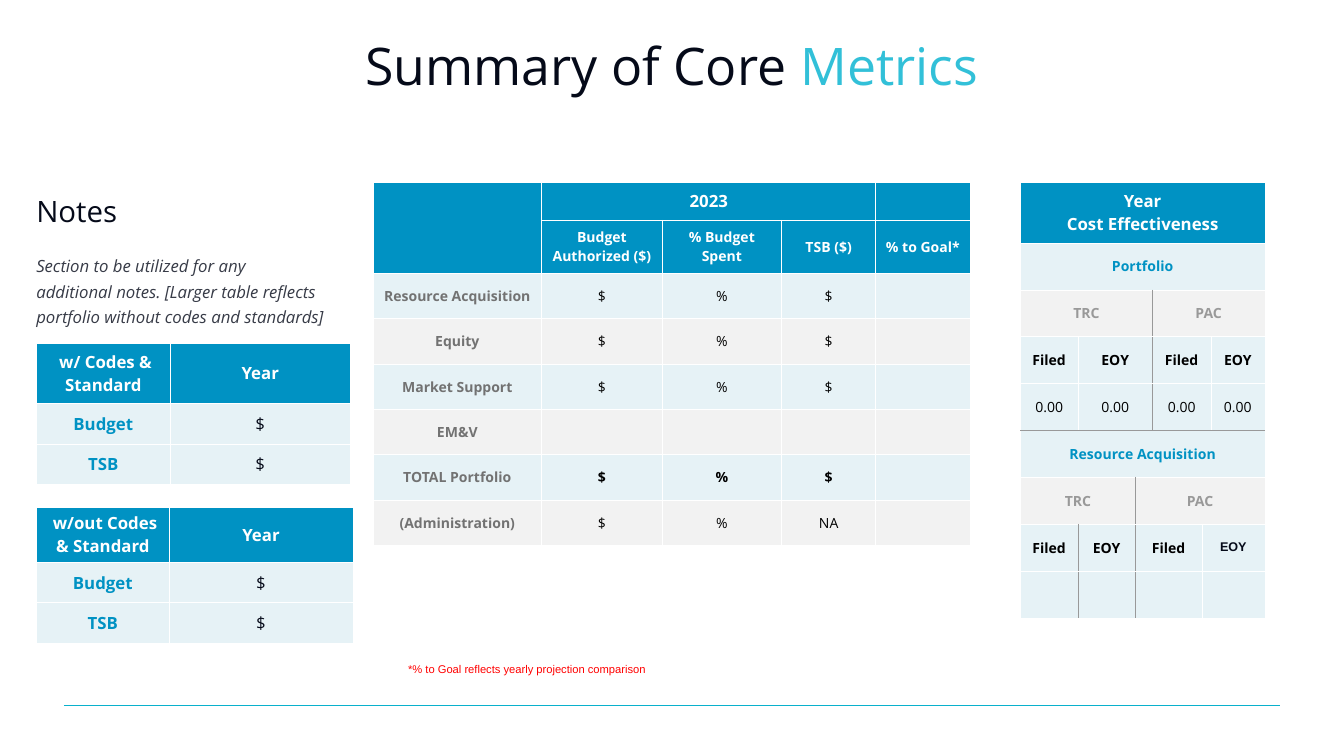
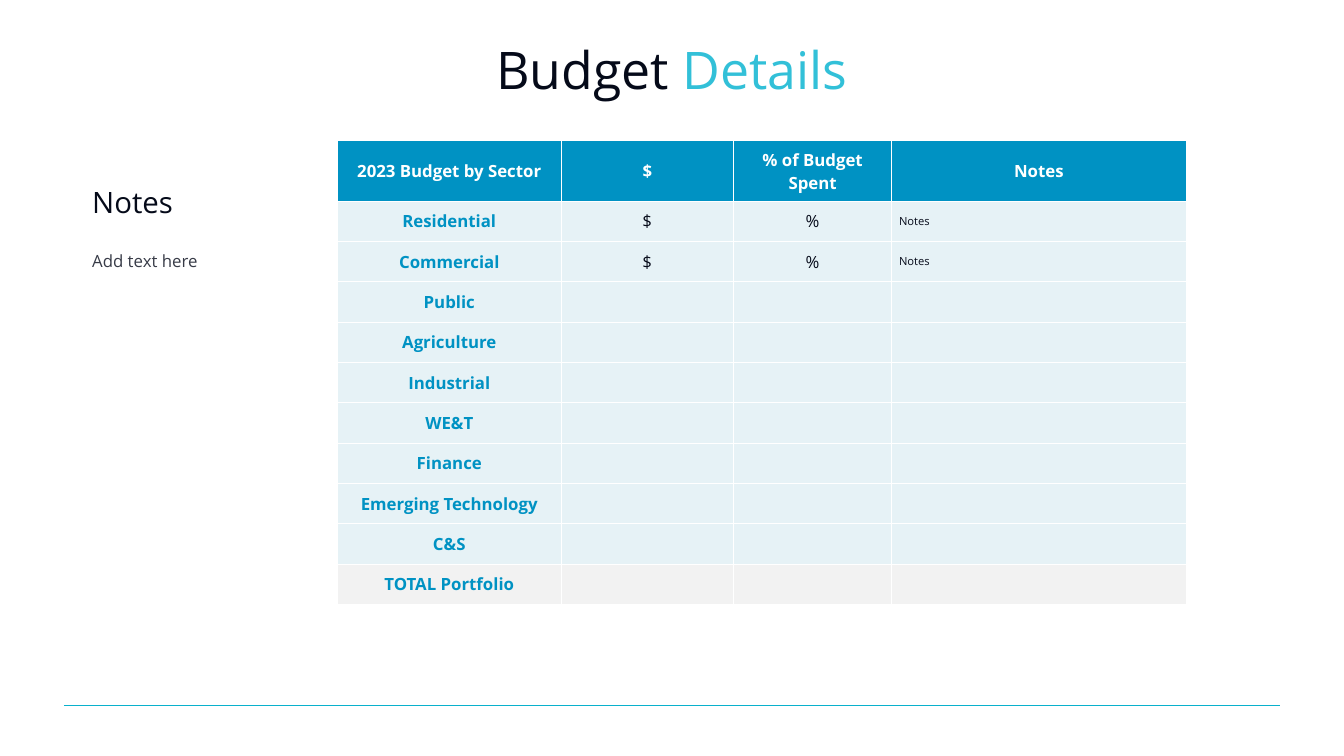
from dataclasses import dataclass

from lxml import etree
from pptx import Presentation
from pptx.dml.color import RGBColor
from pptx.enum.shapes import MSO_CONNECTOR
from pptx.enum.text import MSO_ANCHOR, PP_ALIGN
from pptx.oxml.ns import qn
from pptx.util import Inches, Pt

LEFT, MID = PP_ALIGN.LEFT, PP_ALIGN.CENTER
TOP, CORE = MSO_ANCHOR.TOP, MSO_ANCHOR.MIDDLE
LINE = MSO_CONNECTOR.STRAIGHT

FONT = "Open Sans"
INK, SLATE, BLACK, WHITE = "050A19", "373B47", "000000", "FFFFFF"
BLUE, AQUA, TEAL, RED = "0092C3", "32C0D8", "09B1CC", "FF0000"
PALE, MIST, GREY, DIM = "E6F2F6", "F2F2F2", "999999", "727272"


@dataclass
class Cell:
    """One table cell; edge names the sides (L, R, T, B) drawn in grey."""
    text: str = ""
    fill: str = PALE
    color: str = BLACK
    size: int = 20
    bold: bool = False
    align: object = MID
    font: str = FONT
    wide: int = 1
    tall: int = 1
    edge: str = ""
    pad: float = 0.15


def rgb(code):
    return RGBColor.from_string(code)


def add_run(para, text, size, color, bold=False, italic=False, font=FONT):
    run = para.add_run()
    run.text = text
    run.font.name, run.font.size = font, Pt(size)
    run.font.bold, run.font.italic = bold, italic
    run.font.color.rgb = rgb(color)


def add_text(slide, box, runs, pads=(0, 0.05, 0.1, 0.05), space=1.0,
             align=LEFT, anchor=TOP):
    frame = slide.shapes.add_textbox(*map(Inches, box)).text_frame
    frame.word_wrap = True
    frame.vertical_anchor = anchor
    (frame.margin_left, frame.margin_top,
     frame.margin_right, frame.margin_bottom) = map(Inches, pads)
    para = frame.paragraphs[0]
    para.alignment, para.line_spacing = align, space
    for run in runs:
        add_run(para, *run)


def add_edges(cell, grey):
    props = cell._tc.get_or_add_tcPr()
    for spot, side in enumerate("LRTB"):
        line = etree.Element(qn("a:ln" + side), w=str(Pt(1)))
        fill = etree.SubElement(line, qn("a:solidFill"))
        etree.SubElement(fill, qn("a:srgbClr"),
                         val=GREY if side in grey else WHITE)
        props.insert(spot, line)


def fill_cell(cell, data):
    cell.fill.solid()
    cell.fill.fore_color.rgb = rgb(data.fill)
    add_edges(cell, data.edge)
    if not data.text:
        return
    cell.vertical_anchor = CORE
    cell.margin_left = cell.margin_right = Inches(0.15)
    cell.margin_top = cell.margin_bottom = Inches(data.pad)
    frame = cell.text_frame
    for num, line in enumerate(data.text.split("\n")):
        para = frame.add_paragraph() if num else frame.paragraphs[0]
        para.alignment = data.align
        add_run(para, line, data.size, data.color, data.bold, font=data.font)


def add_grid(slide, left, top, cols, tall, rows):
    """Place a table; None in a row is a place covered by a merged cell."""
    shape = slide.shapes.add_table(
        len(rows), len(cols), Inches(left), Inches(top),
        Inches(sum(cols)), Inches(sum(tall)))
    table = shape.table
    table.first_row = table.horz_banding = False
    for col, size in zip(table.columns, cols):
        col.width = Inches(size)
    for row, size in zip(table.rows, tall):
        row.height = Inches(size)
    for r, row in enumerate(rows):
        for c, data in enumerate(row):
            if data is None:
                continue
            first = table.cell(r, c)
            fill_cell(first, data)
            if data.wide * data.tall == 1:
                continue
            for y in range(r, r + data.tall):
                for x in range(c, c + data.wide):
                    if (y, x) != (r, c):
                        fill_cell(table.cell(y, x),
                                  Cell(fill=data.fill, edge=data.edge))
            first.merge(table.cell(r + data.tall - 1, c + data.wide - 1))


def head(text="", size=24, **more):
    return Cell(text, BLUE, WHITE, size, True, **more)


def key(text, fill=PALE):
    return Cell(text, fill, BLUE, 24, True)


def value(text):
    return Cell(text, color=INK, size=24)


def add_base(slide, start, end, space):
    """Title in two colours and the footer rule."""
    rule = slide.shapes.add_connector(
        LINE, Inches(1.27), Inches(14), Inches(25.4), Inches(14))
    rule.line.color.rgb, rule.line.width = rgb(TEAL), Pt(0.75)
    etree.SubElement(rule._element.spPr, qn("a:effectLst"))
    add_text(slide, (1.83, 0.73, 23, 1.27),
             [(start, 74, INK), (end, 74, AQUA)],
             (0, 0, 0, 0), space, MID, CORE)


def add_notes(slide, box, gap, text, italic=False):
    left, top, width, height = box
    add_text(slide, (left, top, 8.07, 1.04), [("Notes", 42, INK)], space=0.9)
    add_text(slide, (left, top + gap, width, height - gap),
             [(text, 24, SLATE, False, italic)], space=1.28)


def add_codes(slide, top, cols, title, first, pad):
    rows = [[head(title, pad=pad), head("Year")]]
    rows += [[key(name), value("$")] for name in ("Budget", "TSB")]
    add_grid(slide, 0.73, top, cols, [first, 0.8, 0.8], rows)


def add_sectors(slide, left, top):
    """Core metrics by sector."""
    names = ("Budget Authorized ($)", "% Budget Spent", "TSB ($)", "% to Goal*")
    rows = [[head(tall=2), head("2023", wide=3), None, None, head()],
            [None] + [head(name, 20) for name in names]]
    body = [("Resource Acquisition", "$", "%", "$"),
            ("Equity", "$", "%", "$"),
            ("Market Support", "$", "%", "$"),
            ("EM&V", "", "", ""),
            ("TOTAL Portfolio", "$", "%", "$"),
            ("(Administration)", "$", "%", "NA")]
    for num, (name, *vals) in enumerate(body):
        fill = MIST if num % 2 else PALE
        bold = name.startswith("TOTAL")
        rows.append([Cell(name, fill, DIM, bold=True)]
                    + [Cell(val, fill, bold=bold) for val in vals]
                    + [Cell(fill=fill)])
    add_grid(slide, left, top, [3.35, 2.39, 2.37, 1.87, 1.87],
             [0.75, 1.05] + [0.9] * 6, rows)


def add_costs(slide, left, top):
    """Cost effectiveness, filed and at end of year."""
    def band(text, edge=""):
        return [Cell(text, color=BLUE, bold=True, wide=6, edge=edge)] + [None] * 5

    def tests(wide):
        row = [None] * 6
        row[0] = Cell("TRC", MIST, GREY, bold=True, wide=wide, edge="R")
        row[wide] = Cell("PAC", MIST, GREY, bold=True, wide=6 - wide, edge="L")
        return row

    def upper(texts, bold, low=""):
        one, two, three, four = texts
        return [Cell(one, bold=bold, edge=low),
                Cell(two, bold=bold, wide=2, edge="R" + low), None,
                Cell(three, bold=bold, wide=2, edge="L" + low), None,
                Cell(four, bold=bold, edge=low)]

    def lower(texts):
        one, two, three, four = texts
        return [Cell(one, bold=True, edge="R"), Cell(two, bold=True, edge="LR"),
                Cell(three, bold=True, wide=2, edge="L"), None,
                Cell(four, color=INK, size=18, bold=True, font="Arial", wide=2),
                None]

    names = ("Filed", "EOY") * 2
    rows = [[head("Year\nCost Effectiveness", wide=6)] + [None] * 5,
            band("Portfolio"), tests(3), upper(names, True),
            upper(["0.00"] * 4, False, "B"),
            band("Resource Acquisition", "T"), tests(2), lower(names),
            lower([""] * 4)]
    add_grid(slide, left, top, [1.14, 1.14, 0.18, 0.98, 0.18, 1.07],
             [1.2] + [0.93] * 8, rows)


def add_budget(slide, left, top):
    names = ("2023 Budget by Sector", "$", "% of Budget Spent", "Notes")
    rows = [[head(name) for name in names]]
    for name in ("Residential", "Commercial"):
        rows.append([key(name), value("$"), value("%"),
                     Cell("Notes", color=INK, size=16, align=LEFT)])
    for name in ("Public", "Agriculture", "Industrial", "WE&T", "Finance",
                 "Emerging Technology", "C&S", "TOTAL Portfolio"):
        fill = MIST if name.startswith("TOTAL") else PALE
        rows.append([key(name, fill)] + [Cell(fill=fill)] * 3)
    add_grid(slide, left, top, [4.43, 3.43, 3.13, 5.85],
             [1.2] + [0.8] * 10, rows)


def make_core(slide):
    add_base(slide, "Summary of Core", " Metrics", 0.9)
    add_codes(slide, 6.81, [2.64, 3.59], " w/ Codes & Standard", 1.2, 0.15)
    add_sectors(slide, 7.4, 3.62)
    add_costs(slide, 20.25, 3.62)
    add_notes(slide, (0.72, 3.87, 5.81, 3.72), 1.04,
              "Section to be utilized for any additional notes. "
              "[Larger table reflects portfolio without codes and standards]",
              True)
    add_text(slide, (8, 13.1, 5.73, 0.37),
             [("*% to Goal reflects yearly projection comparison",
               16, RED, False, False, "Arial")], (0.1, 0.05, 0.1, 0.05))
    add_codes(slide, 10.06, [2.62, 3.66], " w/out Codes & Standard", 1.1, 0.09)


def make_budget(slide):
    add_base(slide, "Budget ", "Details", 1.0)
    add_notes(slide, (1.83, 3.68, 4.3, 9.39), 1.14, "Add text here")
    add_budget(slide, 6.7, 2.79)


def main():
    deck = Presentation()
    deck.slide_width, deck.slide_height = Inches(26.67), Inches(15)
    for make in (make_core, make_budget):
        make(deck.slides.add_slide(deck.slide_layouts[6]))
    deck.save("out.pptx")


if __name__ == "__main__":
    main()
